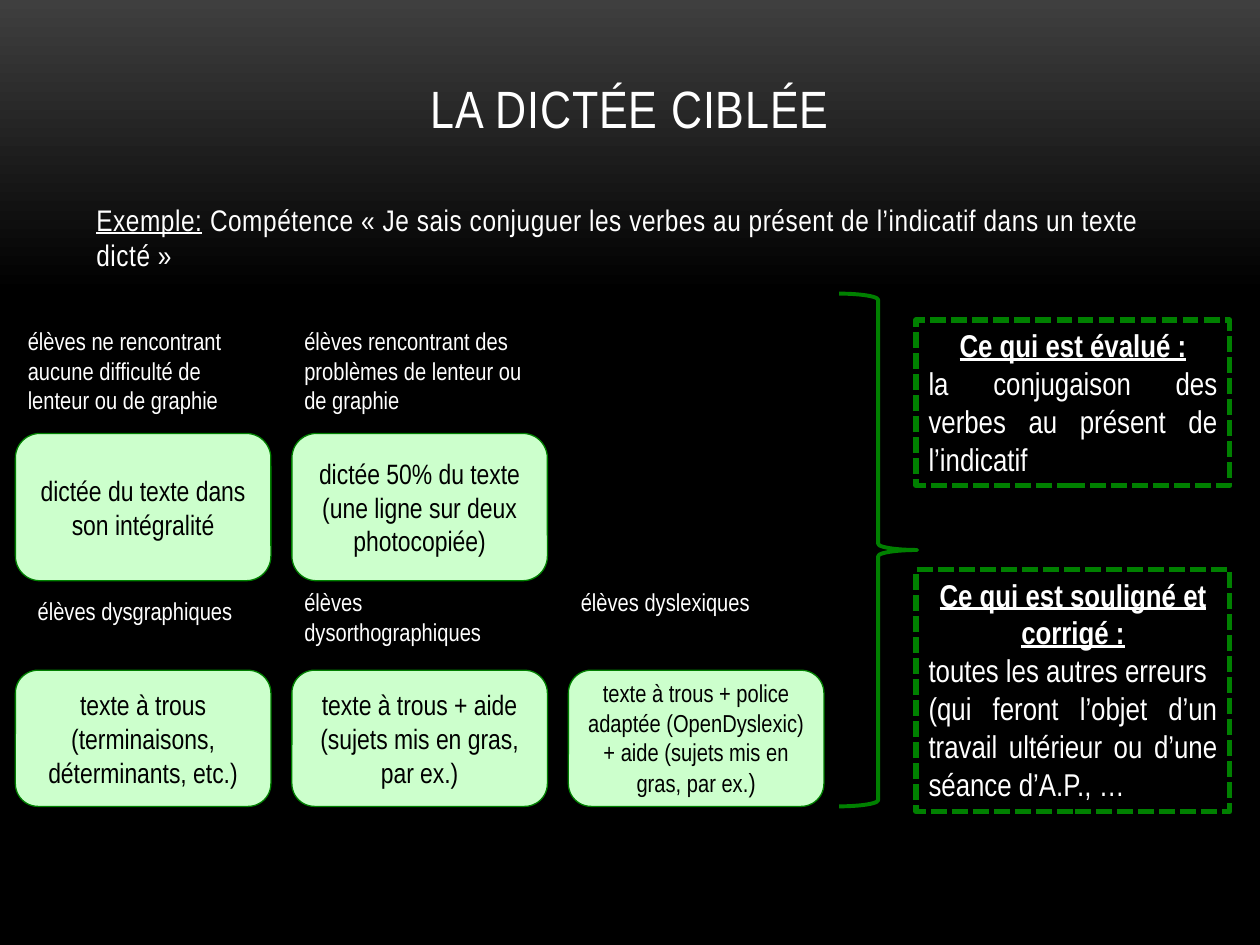
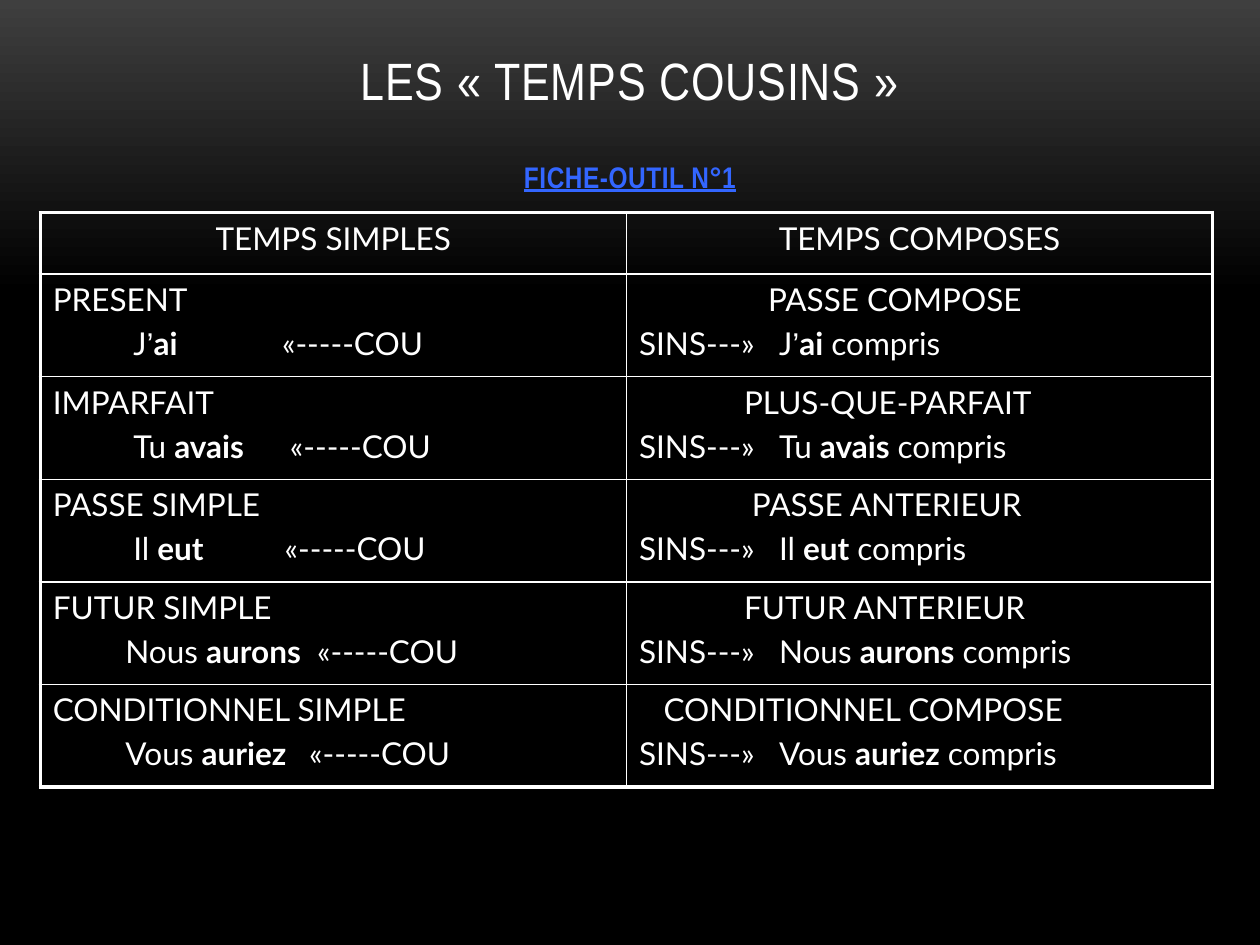
from copy import deepcopy

from lxml import etree
from pptx import Presentation
from pptx.dml.color import RGBColor
from pptx.enum.dml import MSO_LINE
from pptx.enum.shapes import MSO_SHAPE
from pptx.enum.text import MSO_ANCHOR, MSO_AUTO_SIZE, PP_ALIGN
from pptx.oxml.ns import qn
from pptx.util import Pt

WHITE = RGBColor(0xFF, 0xFF, 0xFF)
BLACK = RGBColor(0x00, 0x00, 0x00)
GRAY = RGBColor(0x3F, 0x3F, 0x3F)
GREEN = RGBColor(0x00, 0x80, 0x00)
MINT = RGBColor(0xCC, 0xFF, 0xCC)
BLUE = RGBColor(0x33, 0x66, 0xFF)
NARROW, LATO, ARIAL = "Arial Narrow", "Lato", "Arial"
LEFT, MID, FULL = PP_ALIGN.LEFT, PP_ALIGN.CENTER, PP_ALIGN.JUSTIFY
TOP, CENTER, LOW = MSO_ANCHOR.TOP, MSO_ANCHOR.MIDDLE, MSO_ANCHOR.BOTTOM
ROUND, RECT, BRACE = MSO_SHAPE.ROUNDED_RECTANGLE, MSO_SHAPE.RECTANGLE, MSO_SHAPE.RIGHT_BRACE
DASH = MSO_LINE.SQUARE_DOT
FIXED = MSO_AUTO_SIZE.NONE
HEAD = {"bold": True, "under": True}

COLS = [8.8 + 158 * i for i in range(3)]
WIDE = 146
ROWS = [(247.7, 84.2), (383, 77.8)]
GROUPS = [
    (0, 0, 0, 182.9, 58, "élèves ne rencontrant aucune difficulté de lenteur ou de graphie",
     "dictée du texte dans son intégralité", 16),
    (0, 1, 0, 182.9, 58, "élèves rencontrant des problèmes de lenteur ou de graphie",
     "dictée 50% du texte (une ligne sur deux photocopiée)", 16),
    (1, 0, 5.6, 337, 24.5, "élèves dysgraphiques",
     "texte à trous (terminaisons, déterminants, etc.)", 16),
    (1, 1, 0, 332, 41, "élèves dysorthographiques",
     "texte à trous + aide (sujets mis en gras, par ex.)", 16),
    (1, 2, 0, 332, 24.5, "élèves dyslexiques",
     [("texte à trous + police adaptée (OpenDyslexic) + aide (sujets mis en gras, par ex.", {}),
      (")", {"size": 15})], 14),
]
NOTES = [
    (182.9, 94.6, [(MID, [("Ce qui est évalué :", HEAD)]),
                   (FULL, "la conjugaison des verbes au présent de l’indicatif")]),
    (325.4, 138.4, [(MID, [("Ce qui est souligné et corrigé :", HEAD)]),
                    (FULL, "toutes les autres erreurs"),
                    (FULL, "(qui feront l’objet d’un travail ultérieur ou d’une séance d’A.P., …")]),
]
TENSES = [
    ("PRESENT", "PASSE COMPOSE", "J’", "ai", 46, 131, 73.7),
    ("IMPARFAIT", "PLUS-QUE-PARFAIT", "Tu ", "avais", 46, 135.5, 60),
    ("PASSE SIMPLE", "PASSE ANTERIEUR", "Il ", "eut", 46, 132.5, 64.5),
    ("FUTUR SIMPLE", "FUTUR ANTERIEUR", "Nous ", "aurons", 41.5, 151, 60),
    ("CONDITIONNEL SIMPLE", "CONDITIONNEL COMPOSE", "Vous ", "auriez", 41.5, 146.5, 14),
]


def style(run, size=18, font=NARROW, color=WHITE, bold=False, under=False, space=0):
    look = run.font
    look.size, look.name, look.bold, look.underline = Pt(size), font, bold, under
    look.color.rgb = color
    if space:
        run._r.get_or_add_rPr().set("spc", str(space))


def write(frame, paras, align=LEFT, anchor=TOP, gap=0, tabs=(), **form):
    frame.word_wrap = True
    frame.vertical_anchor = anchor
    if isinstance(paras, str):
        paras = [(align, paras)]
    for i, (side, runs) in enumerate(paras):
        para = frame.add_paragraph() if i else frame.paragraphs[0]
        para.alignment = side
        if i and gap:
            para.space_before = Pt(gap)
        if tabs and tabs[i]:
            stops = etree.SubElement(para._p.get_or_add_pPr(), qn("a:tabLst"))
            for place in tabs[i]:
                etree.SubElement(stops, qn("a:tab"), pos=str(Pt(place)), algn="l")
        for text, extra in [(runs, {})] if isinstance(runs, str) else runs:
            run = para.add_run()
            run.text = text
            style(run, **{**form, **extra})


def spot(x, y, w, h):
    return Pt(x), Pt(y), Pt(w), Pt(h)


def verb(who, word):
    if who.endswith("’"):
        return [(who[:-1], {}), ("’", {"font": ARIAL}), (word, {"bold": True})]
    return [(who, {}), (word, {"bold": True})]


class Deck:
    def __init__(self):
        self.file = Presentation()
        self.file.slide_width, self.file.slide_height = Pt(720), Pt(540)
        self.slide = None
        master = self.file.slide_master
        fill = master.background.fill
        fill.gradient()
        fill.gradient_angle = 270
        for stop, color, place in zip(fill.gradient_stops, (GRAY, BLACK), (0, 0.31)):
            stop.color.rgb = color
            stop.position = place
        stops = master.element.find(".//" + qn("a:gsLst"))
        last = deepcopy(stops[-1])
        last.set("pos", "100000")
        stops.append(last)

    def start(self, title, y, h):
        self.slide = self.file.slides.add_slide(self.file.slide_layouts[5])
        head = self.slide.shapes.title
        head.left, head.top, head.width, head.height = spot(48, y, 624, h)
        write(head.text_frame, title, align=MID, anchor=LOW, size=30, space=50)
        head.text_frame.auto_size = FIXED

    def text(self, place, paras, **form):
        box = self.slide.shapes.add_textbox(*spot(*place))
        write(box.text_frame, paras, **form)

    def shape(self, kind, place, width, fill=None, dash=None):
        item = self.slide.shapes.add_shape(kind, *spot(*place))
        item.shadow.inherit = False
        if fill is None:
            item.fill.background()
        else:
            item.fill.solid()
            item.fill.fore_color.rgb = fill
        item.line.color.rgb = GREEN
        item.line.width = Pt(width)
        if dash is not None:
            item.line.dash_style = dash
        return item

    def table(self, place, highs, rows):
        grid = self.slide.shapes.add_table(len(rows), len(rows[0]), *spot(*place)).table
        grid.first_row = grid.horz_banding = False
        for r, row in enumerate(rows):
            grid.rows[r].height = Pt(highs[r])
            for c, (paras, tabs) in enumerate(row):
                cell = grid.cell(r, c)
                write(cell.text_frame, paras, tabs=tabs, gap=3.6, font=LATO)
                edges = {"L": c == 0, "R": c == len(row) - 1,
                         "T": r == 0, "B": r == len(rows) - 1}
                self.border(cell, edges)
                cell.fill.background()

    def border(self, cell, edges):
        props = cell._tc.get_or_add_tcPr()
        for side, outer in edges.items():
            line = etree.SubElement(props, qn("a:ln" + side), w=str(Pt(2.25 if outer else 1)))
            fill = etree.SubElement(line, qn("a:solidFill"))
            etree.SubElement(fill, qn("a:srgbClr"), val=str(WHITE))


def target(deck):
    deck.start("LA DICTÉE CIBLÉE", 21.6, 61.2)
    deck.text((48, 111.6, 624, 48), [(LEFT, [
        ("Exemple:", {"under": True}),
        (" Compétence «\u00a0Je sais conjuguer les verbes au présent de l’indicatif "
         "dans un texte dicté\u00a0»".replace("\u00a0", " "), {})])], size=17, space=30)
    for row, col, shift, y, h, label, task, size in GROUPS:
        deck.text((COLS[col] + shift, y, WIDE, h), label, size=14)
        top, high = ROWS[row]
        card = deck.shape(ROUND, (COLS[col], top, WIDE, high), 0.75, fill=MINT)
        write(card.text_frame, [(MID, task)], anchor=CENTER, size=size, color=BLACK)
    brace = deck.shape(BRACE, (479.5, 167.8, 44.6, 293), 2.25)
    brace.adjustments[0] = 0.08
    for y, h, paras in NOTES:
        note = deck.shape(RECT, (523.5, y, 179.3, h), 3, dash=DASH)
        write(note.text_frame, paras)


def cousins(deck):
    deck.start("LES « TEMPS COUSINS »", 7.9, 59)
    deck.text((48, 87.1, 624, 30), "FICHE-OUTIL N°1", align=MID,
              size=17, color=BLUE, space=30, **HEAD)
    rows = [[([(MID, name)], ()) for name in ("TEMPS SIMPLES", "TEMPS COMPOSES")]]
    for plain, mixed, who, word, start, arrow, inset in TENSES:
        form = verb(who, word)
        one = [(LEFT, plain), (LEFT, [("\t", {}), *form, ("\t«-----COU", {})])]
        two = [(LEFT, "\t" + mixed), (LEFT, [("SINS---»\t", {}), *form, (" compris", {})])]
        rows.append([(one, ((), (start, arrow))), (two, ((inset,), (80,)))])
    deck.table((23, 121.5, 670, 328.2), [35.2] + [58.6] * len(TENSES), rows)


def main():
    deck = Deck()
    target(deck)
    cousins(deck)
    deck.file.save("out.pptx")


if __name__ == "__main__":
    main()
